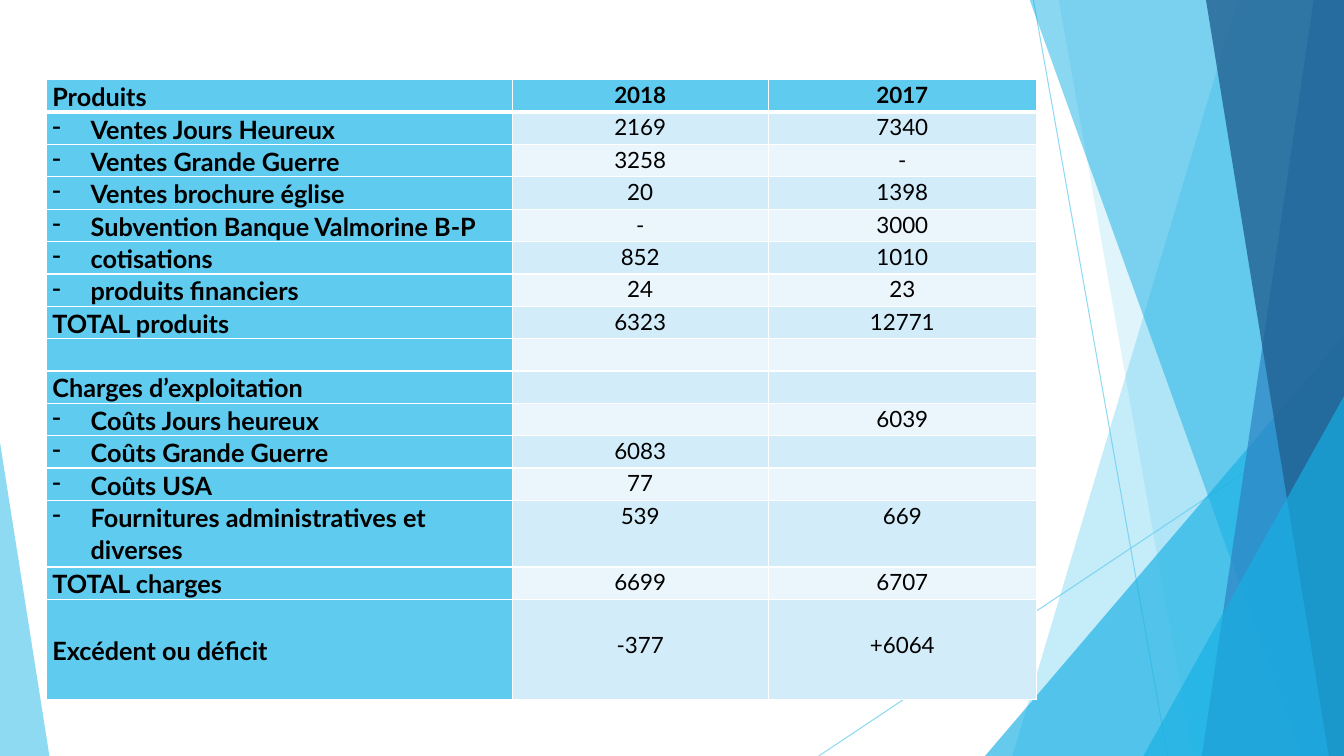
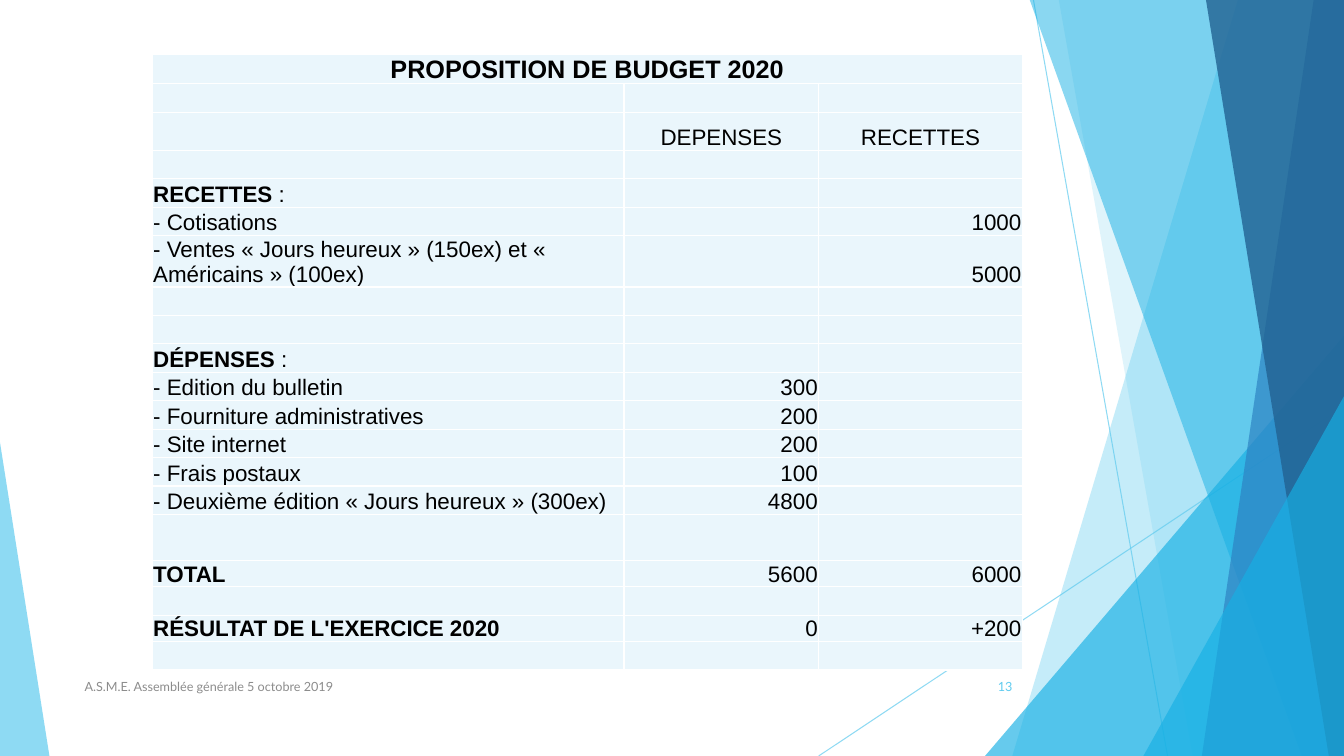
"""Build two slides of yearly accounts and next year's budget."""
from dataclasses import dataclass

from lxml import etree
from pptx import Presentation
from pptx.dml.color import RGBColor
from pptx.enum.shapes import MSO_CONNECTOR, MSO_SHAPE
from pptx.enum.text import MSO_ANCHOR, PP_ALIGN
from pptx.oxml.ns import qn
from pptx.util import Inches, Pt

LEFT, MID, RIGHT = PP_ALIGN.LEFT, PP_ALIGN.CENTER, PP_ALIGN.RIGHT
TOP, CENTRE, BOTTOM = MSO_ANCHOR.TOP, MSO_ANCHOR.MIDDLE, MSO_ANCHOR.BOTTOM
TRI, LINE = MSO_SHAPE.ISOSCELES_TRIANGLE, MSO_CONNECTOR.STRAIGHT


@dataclass(frozen=True)
class Theme:
    sky: str = "5FCBEF"
    cyan: str = "17B0E4"
    blue: str = "2E83C3"
    navy: str = "226292"
    band: str = "D2ECF9"
    pale: str = "EAF6FC"
    white: str = "FFFFFF"
    black: str = "000000"
    grey: str = "8C8C8C"
    sans: str = "Lato"
    plain: str = "Arial"
    big: int = 18
    body: int = 16
    small: int = 9


T = Theme()


def style(item, **vals):
    for name, val in vals.items():
        setattr(item, name, val)


def write(para, text, tint, **font):
    run = para.add_run()
    run.text = text
    style(run.font, **font)
    run.font.color.rgb = RGBColor.from_string(tint)


deck = Presentation()
style(deck, slide_width=Inches(13.33), slide_height=Inches(7.5))
blank = deck.slide_layouts[6]
pages = [deck.slides.add_slide(blank) for _ in range(2)]

group = pages[0].shapes.add_group_shape()
art = group.shapes
for ends in [(10.25, 0, 11.58, 7.5), (13.33, 4.03, 8.12, 7.5)]:
    line = art.add_connector(LINE, *map(Inches, ends))
    line.line.width = Pt(0.75)
    line.line.color.rgb = RGBColor.from_string(T.sky)
    tint = next(line.element.iter(qn("a:srgbClr")))
    etree.SubElement(tint, qn("a:alpha"), val="70000")
    etree.SubElement(line.element.spPr, qn("a:effectLst"))

facets = [
    ("blade", (12.28, 10.04), T.sky, 36),
    ("blade", (10.5, 11.83), T.sky, 20),
    ("tri", (9.77, 3.33, 3.56, 4.17, 1), T.cyan, 66),
    ("blade", (10.21, 12.91), T.cyan, 50),
    ("blade", (13.03, 11.92), T.blue, 70),
    ("blade", (11.96, 13.18), T.navy, 80),
    ("tri", (11.34, 3.93, 1.99, 3.57, 1), T.cyan, 66),
    ("tri", (0, 4.39, 0.49, 3.11, 0), T.sky, 70),
]
for kind, place, hue, alpha in facets:
    if kind == "blade":
        high, low = map(Inches, place)
        edge, roof, floor = map(Inches, (13.33, -0.01, 7.5))
        pen = art.build_freeform(high, roof)
        pen.add_line_segments([(edge, roof), (edge, floor), (low, floor)], close=True)
        facet = pen.convert_to_shape()
    else:
        facet = art.add_shape(TRI, *map(Inches, place[:4]))
        facet.adjustments[0] = place[4]
    facet.shadow.inherit = False
    facet.line.fill.background()
    facet.fill.solid()
    facet.fill.fore_color.rgb = RGBColor.from_string(hue)
    tint = next(facet.element.spPr.iter(qn("a:srgbClr")))
    etree.SubElement(tint, qn("a:alpha"), val=str(alpha * 1000))
deck.slide_master.shapes.element.insert(2, group.element)

accounts = [
    ("Produits", "2018", "2017"),
    ("- Ventes Jours Heureux", "2169", "7340"),
    ("- Ventes Grande Guerre", "3258", "-"),
    ("- Ventes brochure église", "20", "1398"),
    ("- Subvention Banque Valmorine B-P", "-", "3000"),
    ("- cotisations", "852", "1010"),
    ("- produits financiers", "24", "23"),
    ("TOTAL produits", "6323", "12771"),
    ("", "", ""),
    ("Charges d’exploitation", "", ""),
    ("- Coûts Jours heureux", "", "6039"),
    ("- Coûts Grande Guerre", "6083", ""),
    ("- Coûts USA", "77", ""),
    ("- Fournitures administratives et diverses", "539", "669"),
    ("TOTAL charges", "6699", "6707"),
    ("Excédent ou déficit", "-377", "+6064"),
]
budget = [
    ("PROPOSITION DE BUDGET 2020", "", ""),
    ("", "", ""),
    ("", "DEPENSES", "RECETTES"),
    ("", "", ""),
    ("RECETTES :", "", ""),
    ("- Cotisations", "", "1000"),
    ("- Ventes « Jours heureux » (150ex) et « Américains » (100ex)", "", "5000"),
    ("", "", ""),
    ("", "", ""),
    ("DÉPENSES :", "", ""),
    ("- Edition du bulletin", "300", ""),
    ("- Fourniture administratives", "200", ""),
    ("- Site internet", "200", ""),
    ("- Frais postaux", "100", ""),
    ("- Deuxième édition « Jours heureux » (300ex)", "4800", ""),
    ("", "", ""),
    ("TOTAL", "5600", "6000"),
    ("", "", ""),
    ("RÉSULTAT DE L'EXERCICE 2020", "0", "+200"),
    ("", "", ""),
]
grids = [
    dict(data=accounts, at=(0.46, 0.79), cols=(4.62, 2.54, 2.66), high=0.32,
         tall={13: 0.66, 15: 0.99}, font=T.sans, space=1.07, side=0.06, top=0,
         anchor=TOP, main=True),
    dict(data=budget, at=(1.51, 0.54), cols=(4.68, 1.93, 2.02), high=0.26,
         tall={0: 0.28, 2: 0.38, 6: 0.51, 15: 0.46}, font=T.plain, space=1.0,
         side=0.01, top=0.01, anchor=BOTTOM, main=False),
]
for page, grid in zip(pages, grids):
    data, main = grid["data"], grid["main"]
    highs = [grid["tall"].get(row, grid["high"]) for row in range(len(data))]
    size = (sum(grid["cols"]), sum(highs))
    frame = page.shapes.add_table(len(data), 3, *map(Inches, grid["at"] + size))
    table = frame.table
    style(table, first_row=main, horz_banding=False)
    for col, wide in zip(table.columns, grid["cols"]):
        col.width = Inches(wide)
    for row, high in zip(table.rows, highs):
        row.height = Inches(high)
    if not main:
        table.cell(0, 0).merge(table.cell(0, 2))

    for row, texts in enumerate(data):
        for col, text in enumerate(texts):
            cell = table.cell(row, col)
            label = col == 0
            last = main and row == len(data) - 1
            style(cell, margin_left=Inches(grid["side"]),
                  margin_right=Inches(grid["side"]), margin_top=Inches(grid["top"]),
                  margin_bottom=Inches(0.1 if last and not label else 0),
                  vertical_anchor=CENTRE if last else grid["anchor"])
            shade = T.pale
            if main:
                shade = T.sky if label or row == 0 else (T.pale, T.band)[row % 2]
            cell.fill.solid()
            cell.fill.fore_color.rgb = RGBColor.from_string(shade)
            props = cell.fill._xPr
            for spot, side in enumerate("LRTB"):
                thick = main and (row, side) in [(0, "B"), (1, "T")]
                edge = etree.Element(qn(f"a:ln{side}"), w=str(Pt(3 if thick else 1)))
                paint = etree.SubElement(edge, qn("a:solidFill"))
                etree.SubElement(paint, qn("a:srgbClr"), val=T.white)
                props.insert(spot, edge)

            para = cell.text_frame.paragraphs[0]
            big = label if main else row == 0
            points = T.big if big and text else T.body
            if not text:
                etree.SubElement(para._p, qn("a:endParaRPr"), sz=str(points * 100))
                continue
            if main:
                align = LEFT if label else MID
            else:
                align = MID if row in (0, 2) else LEFT if label else RIGHT
            style(para, alignment=align, line_spacing=grid["space"])
            dash = text.startswith("- ")
            if main and dash:
                text = text[2:]
                inset = Inches(0.38)
                shape = para._p.get_or_add_pPr()
                shape.set("marL", str(inset))
                shape.set("indent", str(-inset))
                etree.SubElement(shape, qn("a:buChar"), char="-")
            head, colon, _ = text.partition(" :")
            bold = label or row == 0 if main else label and not dash
            look = dict(name=grid["font"], size=Pt(points))
            write(para, head, T.black, bold=bold, **look)
            if colon:
                write(para, colon, T.black, bold=False, **look)

notes = [
    ("A.S.M.E. Assemblée générale 5 octobre 2019", 0.74, 6.89, LEFT, T.grey),
    ("13", 9.39, 0.75, RIGHT, T.sky),
]
for text, left, wide, align, hue in notes:
    box = pages[1].shapes.add_textbox(*map(Inches, (left, 6.61, wide, 0.4)))
    style(box.text_frame, word_wrap=True, vertical_anchor=CENTRE)
    para = box.text_frame.paragraphs[0]
    para.alignment = align
    write(para, text, hue, name=T.sans, size=Pt(T.small))

deck.save("out.pptx")
